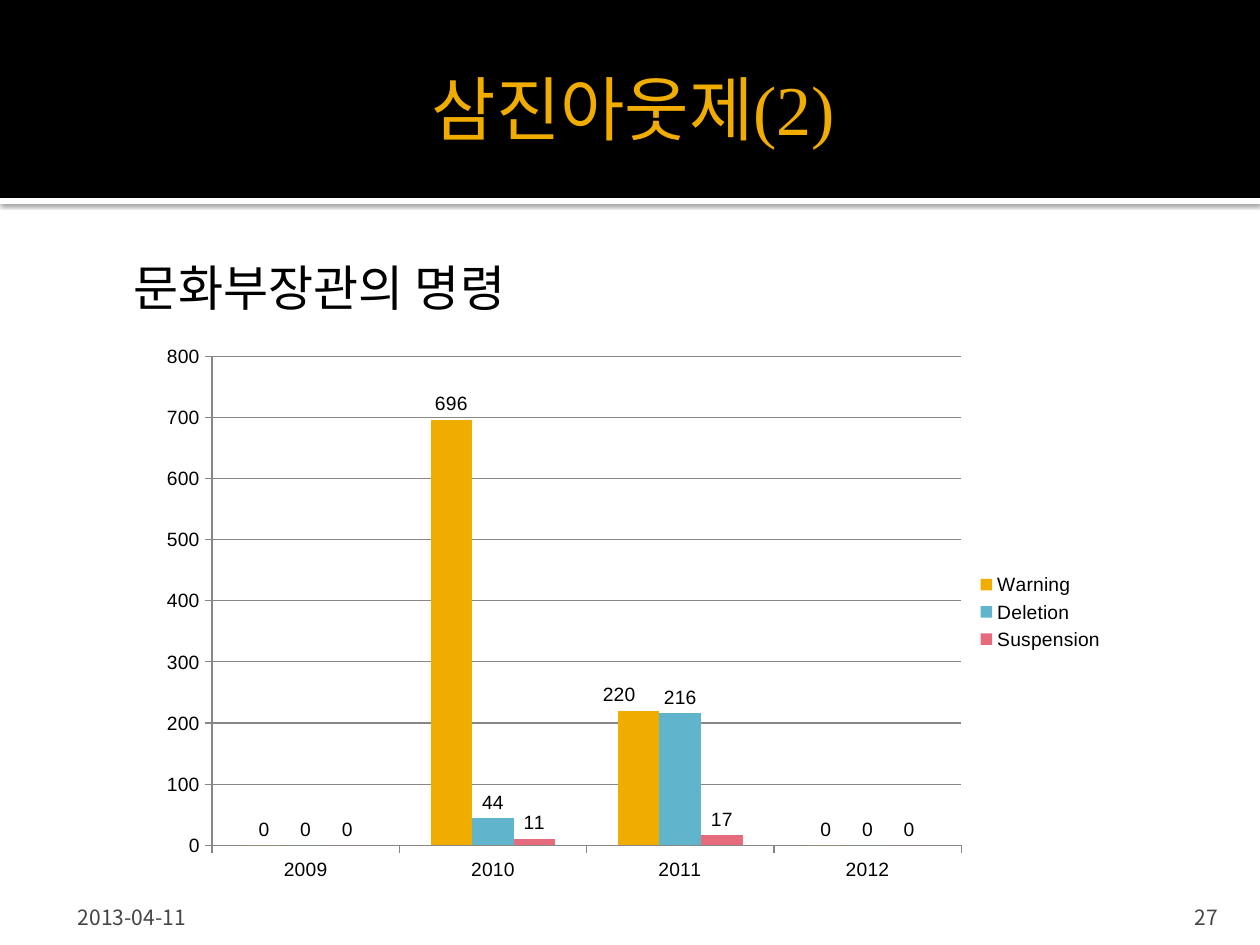
from lxml import etree
from pptx import Presentation
from pptx import util as u
from pptx.chart.data import CategoryChartData
from pptx.dml.color import RGBColor
from pptx.enum import chart as ch, shapes, text
from pptx.oxml import parse_xml
from pptx.oxml.ns import nsdecls, qn

PX_PER_INCH = 126
GOLD, BLUE, PINK = "F0AD00", "60B5CC", "E66C7D"
BLACK, WHITE, GRAY, LINE = "000000", "FFFFFF", "454545", "878787"
SERIF, SANS, KOREAN = "Times New Roman", "Arial", "Noto Sans CJK KR"


def px(n):
    return u.Emu(round(n * 914400 / PX_PER_INCH))


def rgb(value):
    return RGBColor.from_string(value)


def manual_layout(x, y, w=None, h=None, inner=False):
    """Chart layout in fractions of the chart; without a size, an offset."""
    parts = '<c:layoutTarget val="inner"/>' if inner else ""
    if w:
        parts += '<c:xMode val="edge"/><c:yMode val="edge"/>'
    for tag, value in zip("xywh", (x, y, w, h)):
        if value is not None:
            parts += f'<c:{tag} val="{value}"/>'
    return parse_xml(f'<c:layout {nsdecls("c")}><c:manualLayout>{parts}'
                     '</c:manualLayout></c:layout>')


class Deck:
    def __init__(self):
        self.prs = Presentation()
        self.prs.slide_width, self.prs.slide_height = px(1260), px(945)
        self.s = self.prs.slides.add_slide(self.prs.slide_layouts[6])

    def bar(self, y, h, color, shadow=False):
        """Full-width band, with a soft shadow below if asked."""
        sp = self.s.shapes.add_shape(shapes.MSO_SHAPE.RECTANGLE,
                                     0, px(y), px(1260), px(h))
        sp.shadow.inherit = False
        sp.fill.solid()
        sp.fill.fore_color.rgb = rgb(color)
        sp.line.fill.background()
        if shadow:
            effects = sp._element.spPr.find(qn("a:effectLst"))
            effects.append(parse_xml(
                f'<a:outerShdw {nsdecls("a")} blurRad="31750" dist="10160" '
                'dir="5400000" algn="tl" rotWithShape="0"><a:srgbClr val="000000">'
                '<a:alpha val="60000"/></a:srgbClr></a:outerShdw>'))

    def text(self, box, words, size, color, font, insets,
             align=text.PP_ALIGN.LEFT, anchor=text.MSO_ANCHOR.TOP, indent=0):
        sp = self.s.shapes.add_textbox(*map(px, box))
        tf = sp.text_frame
        tf.word_wrap = True
        tf.vertical_anchor = anchor
        (tf.margin_left, tf.margin_top,
         tf.margin_right, tf.margin_bottom) = map(px, insets)
        p = tf.paragraphs[0]
        p.alignment = align
        if indent:
            p._p.get_or_add_pPr().set("marL", str(px(indent)))
        r = p.add_run()
        r.text = words
        r.font.size, r.font.name = u.Pt(size), font
        r.font.color.rgb = rgb(color)
        etree.SubElement(r._r.rPr, qn("a:ea")).set("typeface", KOREAN)

    def column_chart(self, box, cats, series):
        """Clustered columns; series holds (name, values, color) rows."""
        data = CategoryChartData()
        data.categories = cats
        for name, values, _ in series:
            data.add_series(name, values)
        chart = self.s.shapes.add_chart(
            ch.XL_CHART_TYPE.COLUMN_CLUSTERED, *map(px, box), data).chart
        chart.has_title = False
        chart.font.size, chart.font.name = u.Pt(11), SANS
        chart.font.color.rgb = rgb(BLACK)
        chart.has_legend = True
        chart.legend.position = ch.XL_LEGEND_POSITION.RIGHT
        chart.legend.include_in_layout = False

        values_axis = chart.value_axis
        values_axis.minimum_scale, values_axis.maximum_scale = 0, 800
        values_axis.major_unit = 100
        values_axis.has_major_gridlines = True
        for axis in (values_axis, chart.category_axis):
            axis.major_tick_mark = ch.XL_TICK_MARK.OUTSIDE
            axis.format.line.color.rgb = rgb(LINE)
        values_axis.major_gridlines.format.line.color.rgb = rgb(LINE)

        plot = chart.plots[0]
        plot.gap_width, plot.overlap = 150, 0
        plot.vary_by_categories = False
        for item, (_, _, color) in zip(plot.series, series):
            item.format.fill.solid()
            item.format.fill.fore_color.rgb = rgb(color)
            item.invert_if_negative = False
            item.data_labels.show_value = True
            item.data_labels.position = ch.XL_LABEL_POSITION.OUTSIDE_END
        area = chart._chartSpace.chart.plotArea
        for old in area.findall(qn("c:layout")):
            area.remove(old)
        area.insert(0, manual_layout(0.07, 0.04, 0.77, 0.88, inner=True))
        return chart

    def nudge_label(self, chart, series, point, dx):
        item = chart.plots[0].series[series]
        item.points[point].data_label.position = ch.XL_LABEL_POSITION.OUTSIDE_END
        label = item._element.find(f'.//{qn("c:dLbl")}')
        label.insert(1, manual_layout(dx, 0))


def main():
    deck = Deck()
    deck.bar(198, 6, WHITE, shadow=True)
    deck.bar(0, 198, BLACK)
    deck.text((63, 21, 1134, 173), "삼진아웃제(2)", 40, GOLD, SERIF,
              (13, 6, 6, 6), text.PP_ALIGN.CENTER, text.MSO_ANCHOR.MIDDLE)
    deck.text((63, 244, 1134, 638), "문화부장관의 명령", 28, BLACK, SERIF,
              (8, 13, 13, 6), indent=63)
    deck.text((63, 892, 294, 38), "2013-04-11", 12, GRAY, KOREAN,
              (15, 6, 6, 0), anchor=text.MSO_ANCHOR.BOTTOM)
    deck.text((1130, 892, 101, 38), "27", 12, GRAY, KOREAN, (13, 6, 13, 0),
              text.PP_ALIGN.RIGHT, text.MSO_ANCHOR.BOTTOM)
    chart = deck.column_chart(
        (144, 334, 973, 556), ["2009", "2010", "2011", "2012"],
        [("Warning", (0, 696, 220, 0), GOLD),
         ("Deletion", (0, 44, 216, 0), BLUE),
         ("Suspension", (0, 11, 17, 0), PINK)])
    deck.nudge_label(chart, 0, 2, -0.02)
    deck.prs.save("out.pptx")


if __name__ == "__main__":
    main()
